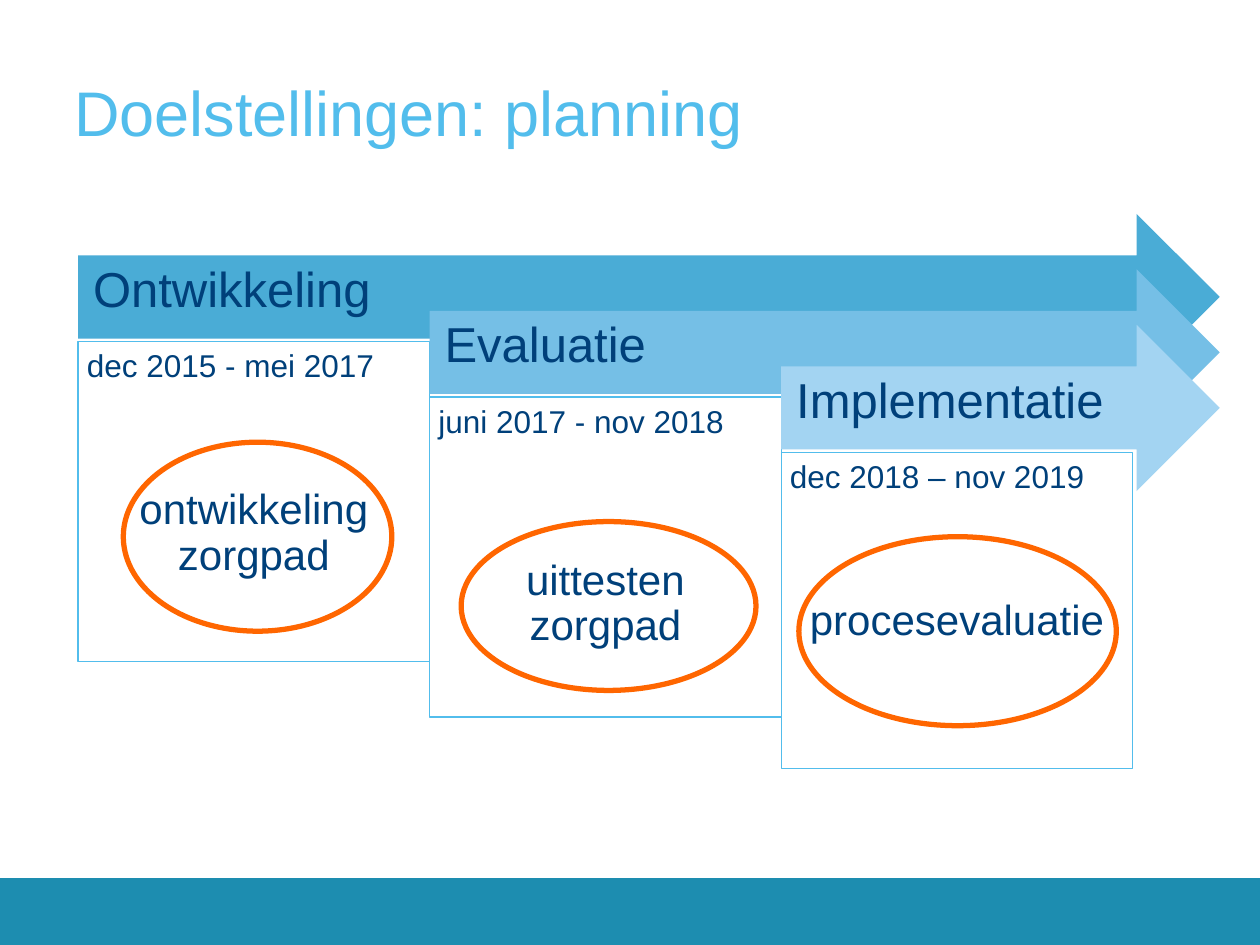
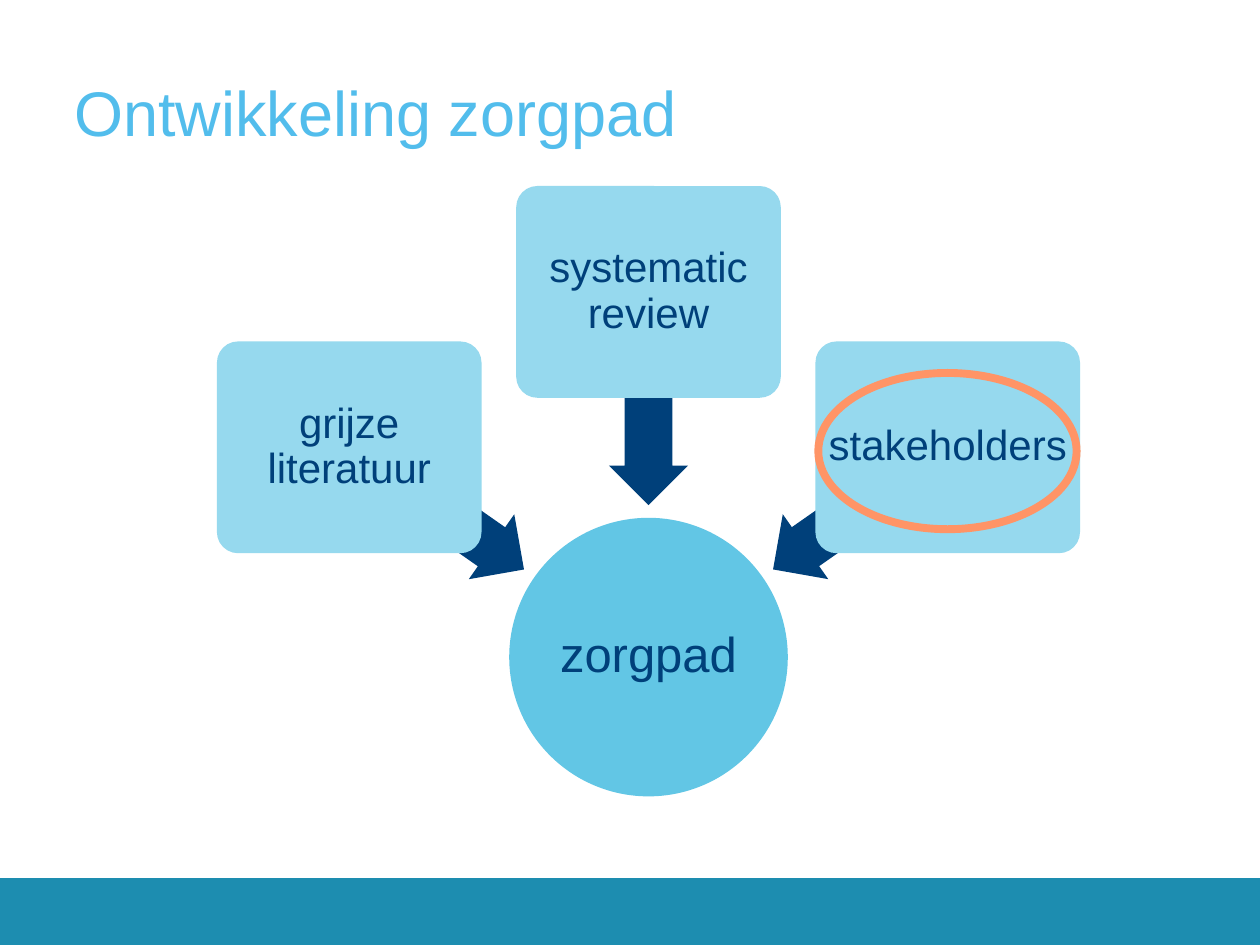
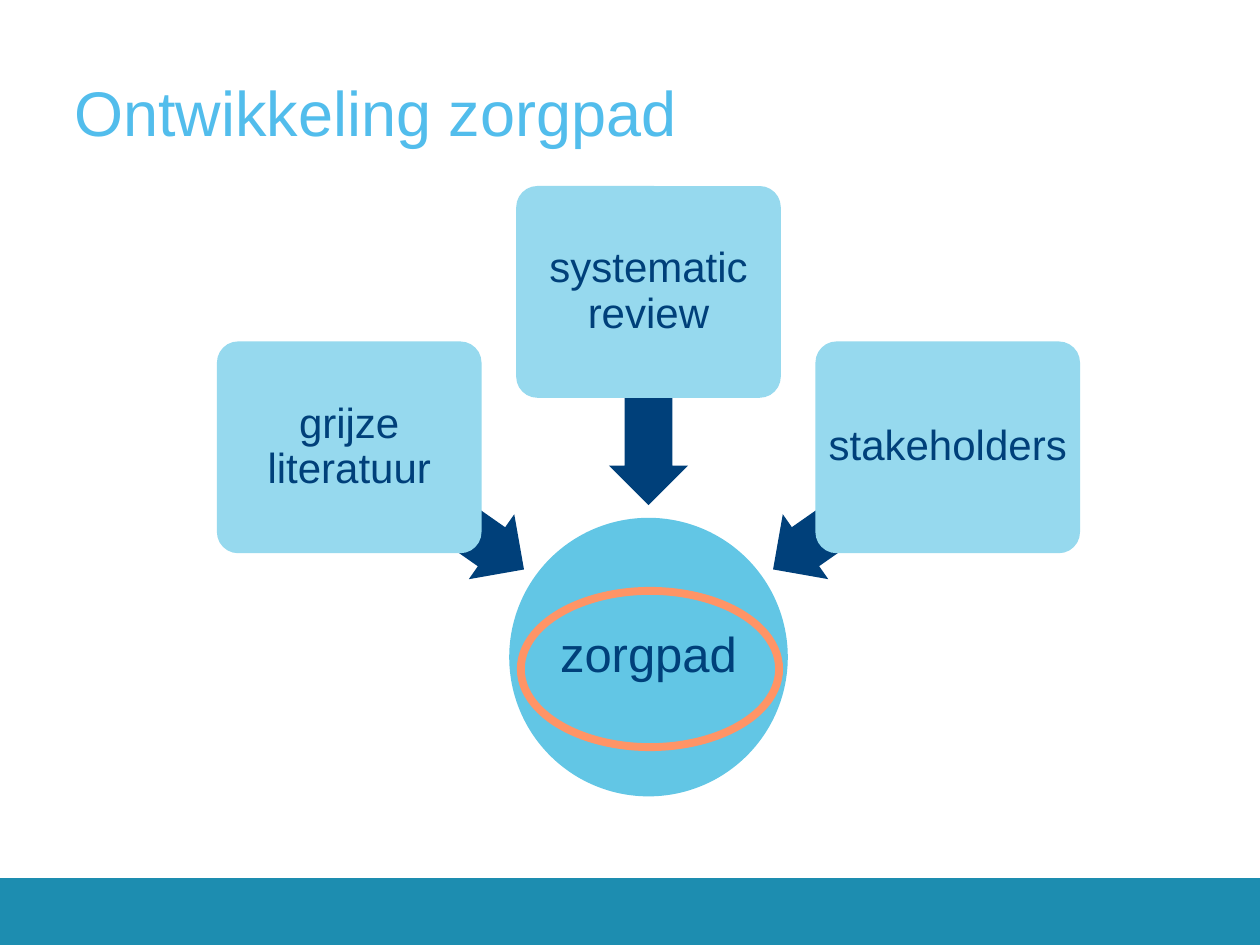
from dataclasses import dataclass

from pptx import Presentation
from pptx.dml.color import RGBColor
from pptx.enum.shapes import MSO_SHAPE as Preset
from pptx.enum.text import MSO_ANCHOR as Anchor, PP_ALIGN as Align
from pptx.util import Pt

WIDTH, HEIGHT = 720, 540


@dataclass(frozen=True)
class Theme:
    font: str = "Arial"
    white: str = "FFFFFF"
    navy: str = "00407A"
    sky: str = "52BDEC"
    band: str = "1D8DB0"
    circle: str = "62C6E5"
    card: str = "96D9EE"
    orange: str = "FF6600"
    salmon: str = "FF9466"
    stages: tuple = ("4AACD6", "75BFE6", "A3D4F2")
    title_size: int = 36
    heading_size: int = 28
    body_size: int = 24
    date_size: int = 18


class Deck:
    """Holds the style and the current slide."""

    def __init__(self, theme):
        self.theme = theme
        self.presentation = Presentation()
        self.presentation.slide_width = Pt(WIDTH)
        self.presentation.slide_height = Pt(HEIGHT)
        self.slide = None

    def new_slide(self, title):
        layout = self.presentation.slide_layouts[6]
        self.slide = self.presentation.slides.add_slide(layout)
        self.shape(Preset.RECTANGLE, 0, 501.8, WIDTH, 38.2, self.theme.band)
        box = self.slide.shapes.add_textbox(Pt(42.5), Pt(14.4), Pt(656), Pt(70.6))
        self.frame(box, (0, 0, 0, 0), Anchor.BOTTOM)
        self.set_text(box.text_frame.paragraphs[0], title, self.theme.title_size,
                      self.theme.sky, spacing=1)

    def shape(self, preset, left, top, width, height, fill=None, line=None, weight=0.75):
        shape = self.slide.shapes.add_shape(preset, Pt(left), Pt(top), Pt(width), Pt(height))
        shape.shadow.inherit = False
        if fill:
            shape.fill.solid()
            shape.fill.fore_color.rgb = RGBColor.from_string(fill)
        else:
            shape.fill.background()
        if line:
            shape.line.color.rgb = RGBColor.from_string(line)
            shape.line.width = Pt(weight)
        else:
            shape.line.fill.background()
        return shape

    def centred(self, preset, x, y, width, height, **style):
        return self.shape(preset, x - width / 2, y - height / 2, width, height, **style)

    def frame(self, shape, insets, anchor):
        frame = shape.text_frame
        frame.word_wrap = True
        frame.vertical_anchor = anchor
        (frame.margin_left, frame.margin_top,
         frame.margin_right, frame.margin_bottom) = map(Pt, insets)

    def set_text(self, paragraph, text, size, color=None, align=Align.LEFT, spacing=0.9):
        paragraph.text = text
        paragraph.alignment = align
        paragraph.line_spacing = spacing
        paragraph.font.name = self.theme.font
        paragraph.font.size = Pt(size)
        paragraph.font.color.rgb = RGBColor.from_string(color or self.theme.navy)

    def label(self, shape, text, size, insets, align=Align.CENTER):
        self.frame(shape, insets, Anchor.MIDDLE)
        self.set_text(shape.text_frame.paragraphs[0], text, size, align=align)

    def stage_arrow(self, left, top, right, height, text, fill):
        arrow = self.shape(Preset.RIGHT_ARROW, left, top, right - left, height, fill)
        self.label(arrow, text, self.theme.heading_size, (8.6, 8.6, 20.2, 15.1), Align.LEFT)

    def stage_panel(self, left, top, width, height, dates, activity, gap):
        panel = self.shape(Preset.RECTANGLE, left, top, width, height,
                           self.theme.white, self.theme.sky)
        self.frame(panel, (5, 5, 5, 5), Anchor.TOP)
        frame = panel.text_frame
        self.set_text(frame.paragraphs[0], dates, self.theme.date_size)
        paragraph = frame.add_paragraph()
        self.set_text(paragraph, activity, self.theme.body_size, align=Align.CENTER)
        paragraph.space_before = Pt(gap)

    def card(self, x, y, text):
        card = self.centred(Preset.ROUNDED_RECTANGLE, x, y, 151.2, 121, fill=self.theme.card)
        card.adjustments[0] = 0.1
        self.label(card, text, self.theme.body_size, (3, 3, 3, 3))

    def pointer(self, x, y, rotation):
        arrow = self.centred(Preset.LEFT_ARROW, x, y, 121.7, 45.3, fill=self.theme.navy)
        arrow.adjustments[0], arrow.adjustments[1] = 0.6, 0.5
        arrow.rotation = rotation


def planning_slide(deck):
    deck.new_slide("Doelstellingen: planning")
    left, top, step_x, step_y = 44.6, 122.2, 200.9, 31.7
    stages = [
        ("Ontwikkeling", "dec 2015 - mei 2017", "ontwikkeling zorgpad", 59.5, 182.9),
        ("Evaluatie", "juni 2017 - nov 2018", "uittesten\vzorgpad", 68, 182.9),
        ("Implementatie", "dec 2018 – nov 2019", "procesevaluatie", 59.5, 180.7),
    ]
    # Staggered arrows with their panels
    for index, (name, dates, activity, gap, height) in enumerate(stages):
        x, y = left + index * step_x, top + index * step_y
        deck.stage_arrow(x, y, 697, 95, name, deck.theme.stages[index])
        deck.stage_panel(x, y + 73, step_x, height, dates, activity, gap)
    # Rings around the activities
    for x, y, width, height in ((147.2, 306.7, 153.4, 108),
                                (347.8, 346.3, 168.5, 96.5),
                                (547.2, 360.7, 181.4, 108)):
        deck.centred(Preset.OVAL, x, y, width, height, line=deck.theme.orange, weight=3)


def care_path_slide(deck, ring_x, ring_y):
    deck.new_slide("Ontwikkeling zorgpad")
    middle = 370.6
    # Result
    circle = deck.centred(Preset.OVAL, middle, 375.5, 159.2, 159.2, fill=deck.theme.circle)
    deck.label(circle, "zorgpad", deck.theme.heading_size, (1.5, 1.5, 1.5, 1.5))
    # Sources: text, side, card height, pointer height, pointer rotation
    for text, side, card_y, pointer_y, rotation in (
            ("grijze literatuur", -1, 255.6, 290.5, 215),
            ("systematic review", 0, 166.8, 227.8, 270),
            ("stakeholders", 1, 255.6, 290.5, 325)):
        deck.pointer(middle + side * 121, pointer_y, rotation)
        deck.card(middle + side * 171, card_y, text)
    # Ring around the current topic
    deck.centred(Preset.OVAL, ring_x, ring_y, 147.6, 89.3, line=deck.theme.salmon, weight=4.5)


def main():
    deck = Deck(Theme())
    planning_slide(deck)
    care_path_slide(deck, 541.4, 257.8)
    care_path_slide(deck, 371.4, 382.3)
    deck.presentation.save("out.pptx")


if __name__ == "__main__":
    main()
